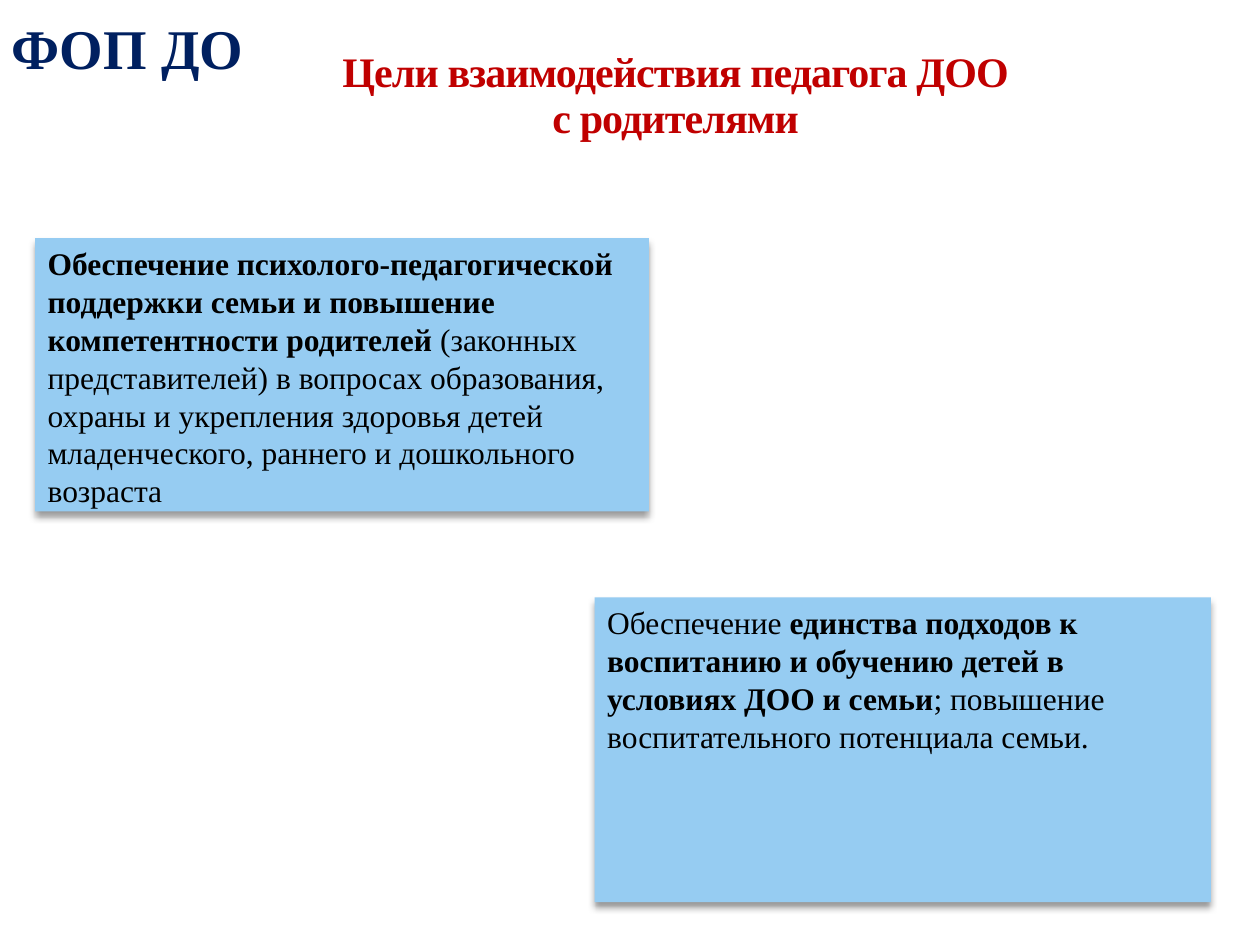
"""Build a slide on the goals of a teacher's work with parents."""
from lxml.etree import SubElement
from pptx import Presentation
from pptx.dml.color import RGBColor
from pptx.enum.shapes import MSO_SHAPE
from pptx.enum.text import MSO_ANCHOR, PP_ALIGN
from pptx.oxml.ns import qn
from pptx.util import Inches, Pt

FONT = "Times New Roman"
WHITE = RGBColor(0xFF, 0xFF, 0xFF)
BLACK = RGBColor(0x00, 0x00, 0x00)
RED = RGBColor(0xC0, 0x00, 0x00)
NAVY = RGBColor(0x00, 0x20, 0x60)
SKY = RGBColor(0x96, 0xCC, 0xF2)


def format_run(r, size, color, bold):
    """Set the font of a run."""
    r.font.name = FONT
    r.font.size = Pt(size)
    r.font.color.rgb = color
    r.font.bold = bold


def add_shadow(sp):
    """Give a shape a soft shadow that falls straight down."""
    effects = sp._element.spPr.find(qn("a:effectLst"))
    shadow = SubElement(effects, qn("a:outerShdw"), blurRad=str(Pt(4)),
                        dist=str(Pt(3)), dir="5400000", rotWithShape="0")
    color = SubElement(shadow, qn("a:srgbClr"), val=str(BLACK))
    SubElement(color, qn("a:alpha"), val="40000")


def add_title(slide, text):
    """Add the centred slide title."""
    sp = slide.shapes.add_textbox(Inches(1.5), Inches(0.35), Inches(7.8), Inches(0.84))
    tf = sp.text_frame
    tf.word_wrap = True
    tf.vertical_anchor = MSO_ANCHOR.MIDDLE
    p = tf.paragraphs[0]
    p.text = text
    p.alignment = PP_ALIGN.CENTER
    p.line_spacing = 0.9
    for r in p.runs:
        format_run(r, 24, RED, True)
        r.font._element.set("spc", "-50")


def add_box(slide, left, top, width, height, fill, parts, size=18, color=BLACK):
    """Add a filled rectangle with text given as (text, bold) parts."""
    sp = slide.shapes.add_shape(MSO_SHAPE.RECTANGLE, Inches(left), Inches(top),
                                Inches(width), Inches(height))
    sp.shadow.inherit = False
    sp.fill.solid()
    sp.fill.fore_color.rgb = fill
    sp.line.fill.background()
    tf = sp.text_frame
    tf.word_wrap = True
    tf.vertical_anchor = MSO_ANCHOR.TOP
    p = tf.paragraphs[0]
    p.alignment = PP_ALIGN.LEFT
    for text, bold in parts:
        r = p.add_run()
        r.text = text
        format_run(r, size, color, bold)
    return sp


def main():
    """Build and save the slide."""
    prs = Presentation()
    prs.slide_width, prs.slide_height = Inches(10), Inches(7.5)
    slide = prs.slides.add_slide(prs.slide_layouts[6])
    add_title(slide, "Цели взаимодействия педагога ДОО \vс родителями ")
    add_box(slide, -0.01, 0.06, 2.29, 0.63, WHITE, [("ФОП ДО", True)], 32, NAVY)
    support = [
        ("Обеспечение психолого-педагогической поддержки семьи и повышение "
         "компетентности родителей ", True),
        ("(законных представителей) в вопросах образования, охраны и укрепления "
         "здоровья детей младенческого, раннего и дошкольного возраста", False),
    ]
    unity = [
        ("Обеспечение ", False),
        ("единства подходов к воспитанию и обучению детей в условиях ДОО и семьи", True),
        ("; повышение воспитательного потенциала семьи.", False),
    ]
    add_shadow(add_box(slide, 0.28, 1.89, 4.87, 2.17, SKY, support))
    add_shadow(add_box(slide, 4.72, 4.74, 4.89, 2.42, SKY, unity))
    prs.save("out.pptx")


if __name__ == "__main__":
    main()
